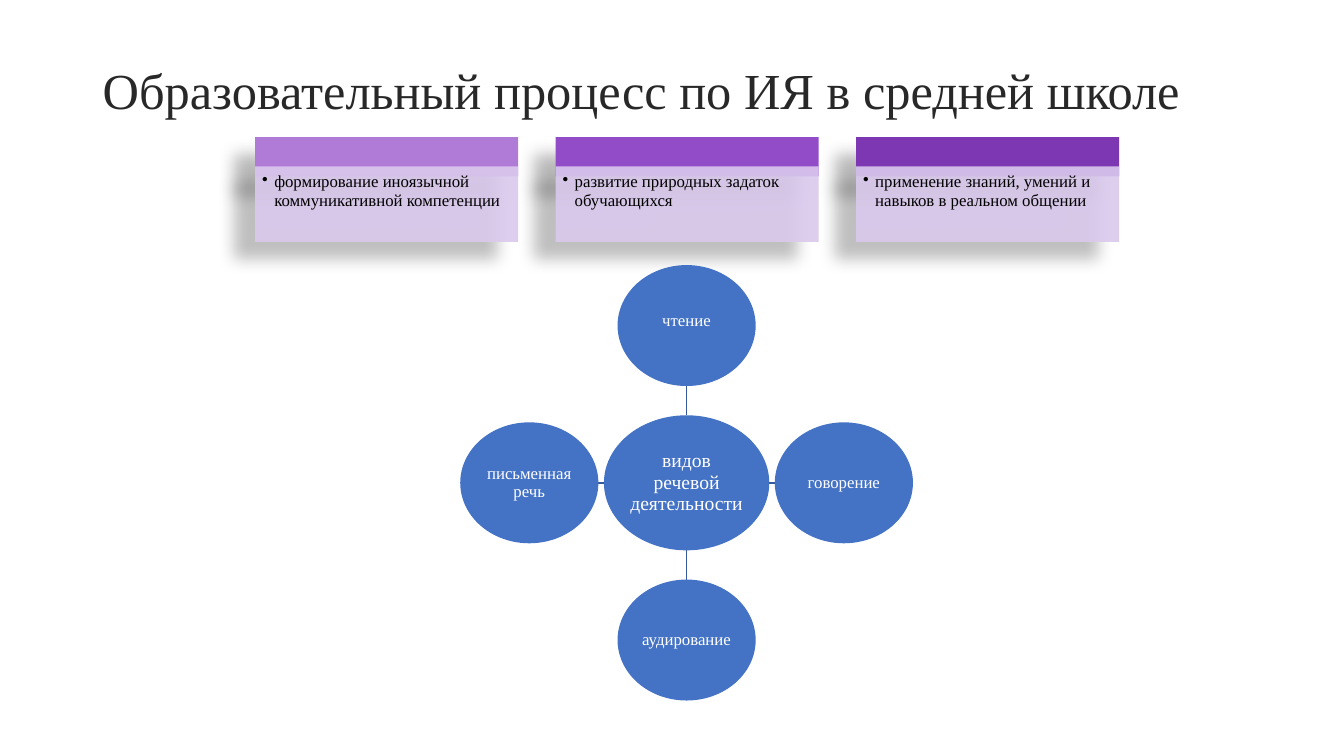
from dataclasses import dataclass

import pptx
import pptx.dml.color
import pptx.enum.shapes
import pptx.enum.text
import pptx.oxml
import pptx.oxml.ns
import pptx.util
from pptx.util import Inches

FONT = "Times New Roman"
ALIGN = pptx.enum.text.PP_ALIGN
ANCHOR = pptx.enum.text.MSO_ANCHOR
KIND = pptx.enum.shapes.MSO_SHAPE
SPACE = pptx.oxml.ns.nsdecls("a")


@dataclass
class Card:
    text: str
    tint: str


@dataclass
class Skill:
    text: str
    dx: int
    dy: int
    foot: float = 0.01


CARDS = [
    Card("формирование иноязычной коммуникативной компетенции", "B07BD7"),
    Card("развитие природных задаток обучающихся", "934CC8"),
    Card("применение знаний, умений и навыков в реальном общении", "7E37B3"),
]
SKILLS = [
    Skill("чтение", 0, -1, 0.09),
    Skill("говорение", 1, 0),
    Skill("аудирование", 0, 1),
    Skill("письменная речь", -1, 0),
]
CARD_X, CARD_Y, CARD_W, PITCH = 2.53, 1.36, 2.61, 2.98
BAND_H, BODY_Y, BODY_H = 0.39, 1.65, 0.75
MID_X, MID_Y, REACH = 6.81, 4.79, 1.56
HUB_W, HUB_H, NODE_W, NODE_H = 1.64, 1.34, 1.37, 1.2


def color(code: str) -> pptx.dml.color.RGBColor:
    return pptx.dml.color.RGBColor.from_string(code)


def write(shape, text: str, *, size: float, tint: str, align=ALIGN.LEFT,
          anchor=ANCHOR.MIDDLE, pad=(0.01, 0.01, 0.01, 0.01),
          bullet: bool = False) -> None:
    frame = shape.text_frame
    frame.word_wrap = True
    frame.vertical_anchor = anchor
    (frame.margin_left, frame.margin_top,
     frame.margin_right, frame.margin_bottom) = map(Inches, pad)
    para = frame.paragraphs[0]
    para.alignment = align
    para.line_spacing = 0.9
    run = para.add_run()
    run.text = text
    run.font.name = FONT
    run.font.size = pptx.util.Pt(size)
    run.font.color.rgb = color(tint)
    if bullet:
        props = para._p.get_or_add_pPr()
        props.set("marL", str(Inches(0.12)))
        props.set("indent", str(Inches(-0.12)))
        props.append(pptx.oxml.parse_xml(f'<a:buChar {SPACE} char="•"/>'))


def block(slide, kind, x: float, y: float, w: float, h: float, fill: str):
    shape = slide.shapes.add_shape(kind, *map(Inches, (x, y, w, h)))
    shape.shadow.inherit = False
    shape.fill.solid()
    shape.fill.fore_color.rgb = color(fill)
    shape.line.fill.background()
    return shape


def shade(shape) -> None:
    effects = shape._element.spPr.find(pptx.oxml.ns.qn("a:effectLst"))
    blur, dist = pptx.util.Pt(11.8), pptx.util.Pt(19.7)
    effects.append(pptx.oxml.parse_xml(
        f'<a:outerShdw {SPACE} blurRad="{blur}" dist="{dist}" dir="{141 * 60000}"'
        ' algn="ctr" rotWithShape="0"><a:srgbClr val="000000">'
        '<a:alpha val="28000"/></a:srgbClr></a:outerShdw>'))


def fade(shape, share: int) -> None:
    tone = shape._element.spPr.find(".//" + pptx.oxml.ns.qn("a:srgbClr"))
    tone.append(pptx.oxml.parse_xml(f'<a:alpha {SPACE} val="{share * 1000}"/>'))


def add_card(slide, card: Card, x: float) -> None:
    band = block(slide, KIND.RECTANGLE, x, CARD_Y, CARD_W, BAND_H, card.tint)
    shade(band)
    body = block(slide, KIND.RECTANGLE, x, BODY_Y, CARD_W, BODY_H, "DAC9ED")
    fade(body, 90)
    shade(body)
    write(body, card.text, size=12, tint="000000", anchor=ANCHOR.TOP,
          pad=(0.07, 0.07, 0.09, 0.1), bullet=True)


def add_oval(slide, text: str, x: float, y: float, w: float, h: float,
             size: float, foot: float = 0.01) -> None:
    oval = block(slide, KIND.OVAL, x - w / 2, y - h / 2, w, h, "4472C4")
    write(oval, text, size=size, tint="FFFFFF", align=ALIGN.CENTER,
          pad=(0.01, 0.01, 0.01, foot))


def add_skill(slide, skill: Skill) -> None:
    dx, dy = skill.dx, skill.dy
    ends = (MID_X + dx * HUB_W / 2, MID_Y + dy * HUB_H / 2,
            MID_X + dx * (REACH - NODE_W / 2), MID_Y + dy * (REACH - NODE_H / 2))
    link = slide.shapes.add_connector(
        pptx.enum.shapes.MSO_CONNECTOR.STRAIGHT, *map(Inches, ends))
    link.line.color.rgb = color("365B9D")
    link.line.width = pptx.util.Pt(1)
    link._element.spPr.append(pptx.oxml.parse_xml(f"<a:effectLst {SPACE}/>"))
    add_oval(slide, skill.text, MID_X + dx * REACH, MID_Y + dy * REACH,
             NODE_W, NODE_H, 12, skill.foot)


def main() -> None:
    deck = pptx.Presentation()
    deck.slide_width, deck.slide_height = Inches(13.33), Inches(7.5)
    slide = deck.slides.add_slide(deck.slide_layouts[6])
    title = slide.shapes.add_textbox(*map(Inches, (0.92, 0.4, 11.5, 1.04)))
    write(title, "Образовательный процесс по ИЯ в средней школе", size=36,
          tint="282828", pad=(0.1, 0.05, 0.1, 0.05))
    for i, card in enumerate(CARDS):
        add_card(slide, card, CARD_X + i * PITCH)
    add_oval(slide, "видов речевой деятельности", MID_X, MID_Y, HUB_W, HUB_H, 14)
    for skill in SKILLS:
        add_skill(slide, skill)
    deck.save("out.pptx")


if __name__ == "__main__":
    main()
